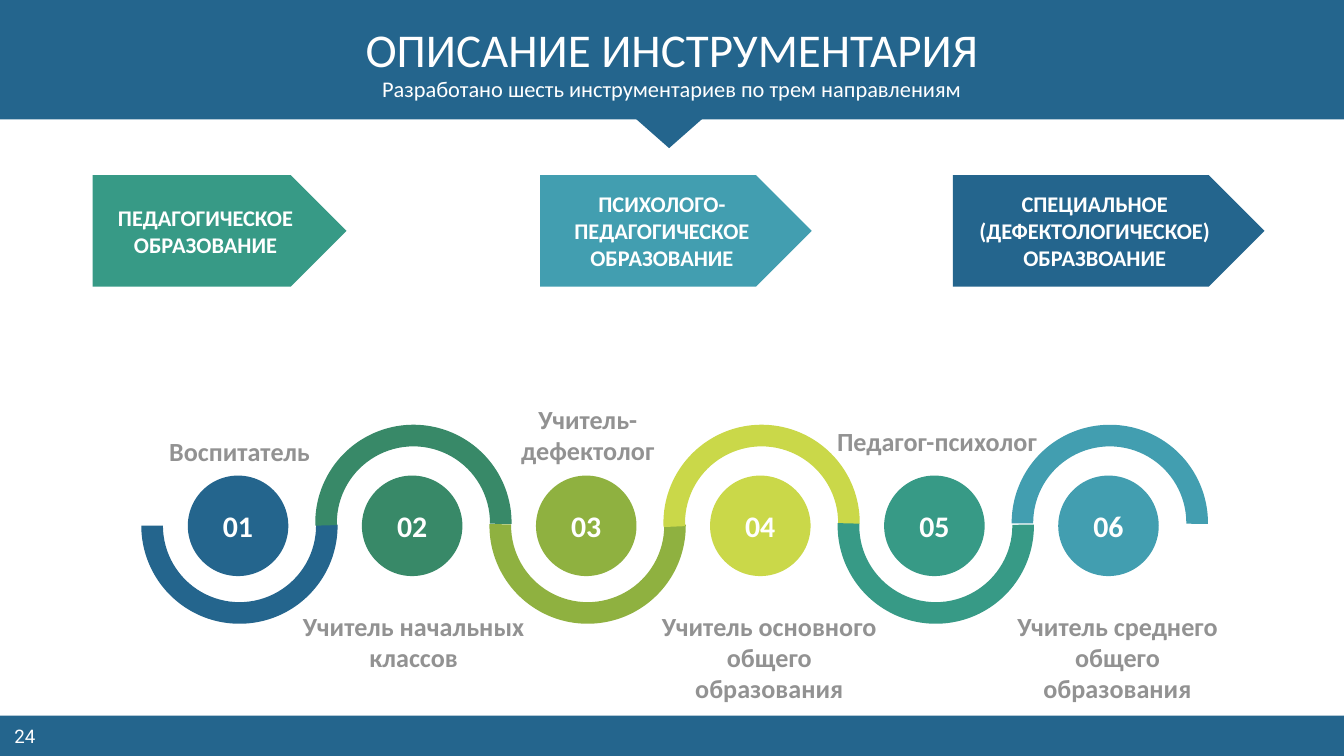
from pptx import Presentation
from pptx.dml.color import RGBColor
from pptx.enum.shapes import MSO_SHAPE
from pptx.enum.text import MSO_ANCHOR, PP_ALIGN
from pptx.util import Cm, Pt

RECT = MSO_SHAPE.RECTANGLE
TRIANGLE = MSO_SHAPE.ISOSCELES_TRIANGLE
ARC = MSO_SHAPE.BLOCK_ARC
OVAL = MSO_SHAPE.OVAL
PENTAGON = MSO_SHAPE.PENTAGON
CENTER = PP_ALIGN.CENTER
TOP, MIDDLE = MSO_ANCHOR.TOP, MSO_ANCHOR.MIDDLE

WIDTH, HEIGHT = 25.4, 14.29
WHITE, GREY, BLUE = "FFFFFF", "929292", "24658D"
TEAL, SKY = "379A86", "429EB0"

# left, width, colour, text
DIRECTIONS = [
    (0, 4.8, TEAL, "ПЕДАГОГИЧЕСКОЕ ОБРАЗОВАНИЕ"),
    (8.46, 5.13, SKY, "ПСИХОЛОГО-ПЕДАГОГИЧЕСКОЕ ОБРАЗОВАНИЕ"),
    (16.26, 5.89, BLUE, "СПЕЦИАЛЬНОЕ (ДЕФЕКТОЛОГИЧЕСКОЕ) ОБРАЗВОАНИЕ"),
]

# colour, arc end overlap, label left and top offsets, label lines, label
STEPS = [
    (BLUE, 0.03, -0.31, 0.15, 1, "Воспитатель"),
    ("388968", 0.98, -0.31, 3.45, 2, "Учитель начальных классов"),
    ("8FB140", 0.55, -0.31, -0.46, 2, "Учитель-дефектолог"),
    ("CAD849", 1.46, -0.17, 3.45, 3, "Учитель основного общего образования"),
    (TEAL, 0.88, -0.29, -0.03, 1, "Педагог-психолог"),
    (SKY, 0.19, -0.17, 3.45, 3, "Учитель среднего общего образования"),
]


def rgb(color):
    return RGBColor.from_string(color)


def write(s, text, size, color=WHITE, bold=False, font="Calibri", anchor=MIDDLE):
    tf = s.text_frame
    tf.word_wrap = True
    tf.vertical_anchor = anchor
    p = tf.paragraphs[0]
    p.alignment = CENTER
    r = p.add_run()
    r.text = text
    r.font.size = Pt(size)
    r.font.name = font
    r.font.bold = bold
    r.font.color.rgb = rgb(color)


def add_shape(slide, kind, left, top, width, height, color):
    s = slide.shapes.add_shape(kind, Cm(left), Cm(top), Cm(width), Cm(height))
    s.shadow.inherit = False
    s.fill.solid()
    s.fill.fore_color.rgb = rgb(color)
    s.line.fill.background()
    return s


def add_text(slide, left, top, width, height, text, size, **style):
    """Add a text box without margins."""
    s = slide.shapes.add_textbox(Cm(left), Cm(top), Cm(width), Cm(height))
    tf = s.text_frame
    tf.margin_left = tf.margin_right = tf.margin_top = tf.margin_bottom = 0
    write(s, text, size, **style)


def add_header(slide, left, top, width, height):
    add_shape(slide, RECT, left, top, width, height, BLUE)
    pointer = add_shape(slide, TRIANGLE, left + 12.01, top + height - 0.02,
                        1.27, 0.56, BLUE)
    pointer.rotation = 180
    inner = width - 2 * 1.1
    add_text(slide, left + 1.1, top + 0.38, inner, 0.94,
             "ОПИСАНИЕ ИНСТРУМЕНТАРИЯ", 25.2, anchor=TOP)
    add_text(slide, left + 1.1, top + 1.43, inner, 0.48,
             "Разработано шесть инструментариев по трем направлениям", 12)


def add_footer(slide, left, top, width, height):
    add_shape(slide, RECT, left, top, width, height, BLUE)
    add_text(slide, left + 0.05, top + 0.16, 0.84, 0.43, "24", 10, font="Roboto")


def add_directions(slide, left, top, height):
    for offset, width, color, text in DIRECTIONS:
        s = add_shape(slide, PENTAGON, left + offset, top, width, height, color)
        write(s, text, 12, bold=True)


def add_wave(slide, left, top, size, pitch):
    """Chain half rings below and above numbered circles, with a label each."""
    circle = 1.9
    for i, (color, overlap, dx, dy, lines, label) in enumerate(STEPS):
        x = left + i * pitch
        upper = i % 2 == 1
        arc = add_shape(slide, ARC, x, top - 0.05 * upper, size, size, color)
        # Angles are in units of 100000/60000 degrees: 108 is a half turn
        if upper:
            start, end = 108 - overlap, 0.36
        else:
            start, end = 107.64, overlap
            arc.rotation = 180
        for n, value in enumerate((start, end, 0.11)):
            arc.adjustments[n] = value
        s = add_shape(slide, OVAL, x + 0.88, top + 0.91, circle, circle, color)
        write(s, f"{i + 1:02}", 16, bold=True)
        add_text(slide, x + dx, top + dy, 4.34, 0.6 * lines, label, 14,
                 color=GREY, bold=True, anchor=TOP)


def main():
    prs = Presentation()
    prs.slide_width, prs.slide_height = Cm(WIDTH), Cm(HEIGHT)
    slide = prs.slides.add_slide(prs.slide_layouts[6])
    add_footer(slide, 0, 13.53, WIDTH, 0.76)
    add_header(slide, 0, 0, WIDTH, 2.26)
    add_wave(slide, 2.67, 8.08, 3.71, 3.29)
    add_directions(slide, 1.75, 3.31, 2.11)
    prs.save("out.pptx")


if __name__ == "__main__":
    main()
